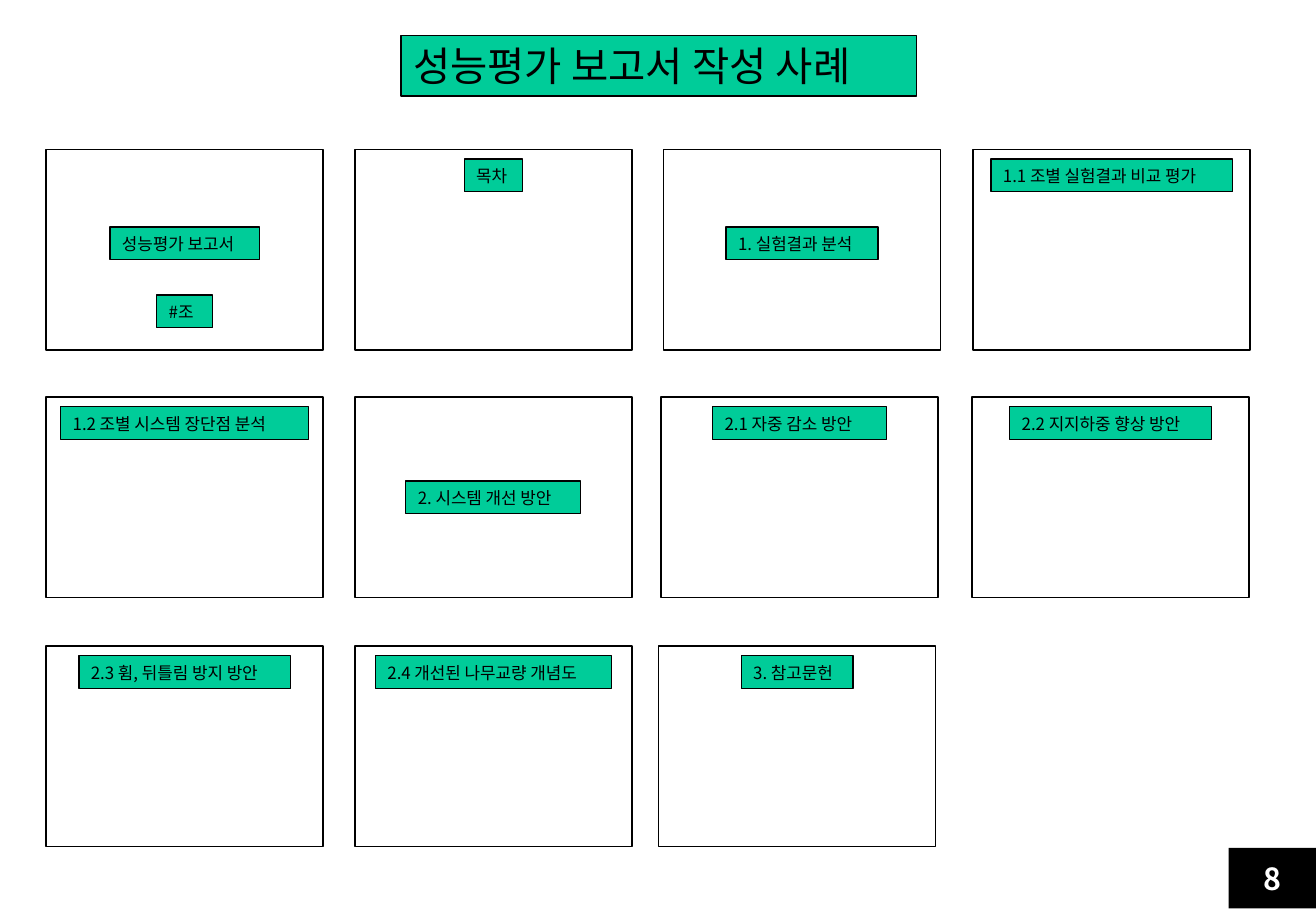
from pptx import Presentation, util as u
from pptx.dml.color import RGBColor
from pptx.enum import shapes, text

PX = 9144  # 100 px to the inch

THEME = {
    "font": "Noto Sans CJK KR",
    "ink": RGBColor(0, 0, 0),
    "paper": RGBColor(255, 255, 255),
    "accent": RGBColor(0x00, 0xCC, 0x99),
    "title": 24, "label": 10, "number": 18,
    "frame_line": 1, "label_line": 0.75,
}

CARD_W, CARD_H, LABEL_H = 228, 165, 27
TOP, MIDDLE, LOW_MIDDLE, BOTTOM = 8, 64, 69, 120  # label offsets in a card

# Each row: top, then cards as (left, [(label, label width, label offset)])
ROWS = [
    (123, [
        (38, [("성능평가 보고서", 123, MIDDLE), ("#조", 46, BOTTOM)]),
        (292, [("목차", 48, TOP)]),
        (546, [("1. 실험결과 분석", 125, MIDDLE)]),
        (801, [("1.1 조별 실험결과 비교 평가", 199, TOP)]),
    ]),
    (327, [
        (38, [("1.2 조별 시스템 장단점 분석", 204, TOP)]),
        (292, [("2. 시스템 개선 방안", 144, LOW_MIDDLE)]),
        (544, [("2.1 자중 감소 방안", 143, TOP)]),
        (800, [("2.2 지지하중 향상 방안", 166, TOP)]),
    ]),
    (532, [
        (38, [("2.3 휨, 뒤틀림 방지 방안", 174, TOP)]),
        (292, [("2.4 개선된 나무교량 개념도", 194, TOP)]),
        (542, [("3. 참고문헌", 92, TOP)]),
    ]),
]


def px(box):
    return [round(v * PX) for v in box]


def paint(sp, fill, line=None):
    sp.fill.solid()
    sp.fill.fore_color.rgb = fill
    if line:
        sp.line.color.rgb = THEME["ink"]
        sp.line.width = u.Pt(line)
    else:
        sp.line.fill.background()


def add_box(slide, box, fill, line=None):
    sp = slide.shapes.add_shape(shapes.MSO_SHAPE.RECTANGLE, *px(box))
    sp.shadow.inherit = False
    paint(sp, fill, line)
    return sp


def write(sp, words, size, color, align=text.PP_ALIGN.LEFT, bold=False):
    tf = sp.text_frame
    frame = {"word_wrap": True, "auto_size": text.MSO_AUTO_SIZE.NONE,
             "vertical_anchor": text.MSO_ANCHOR.MIDDLE,
             "margin_left": 10 * PX, "margin_right": 5 * PX,
             "margin_top": 0, "margin_bottom": 0}
    if align == text.PP_ALIGN.CENTER:
        frame["margin_right"] = frame["margin_left"]
    for name, value in frame.items():
        setattr(tf, name, value)
    p = tf.paragraphs[0]
    p.alignment, p.line_spacing = align, 1.0
    r = p.add_run()
    r.text = words
    for name, value in {"name": THEME["font"], "size": u.Pt(size), "bold": bold}.items():
        setattr(r.font, name, value)
    r.font.color.rgb = color


def add_title(slide, box):
    sp = slide.shapes.title
    sp.left, sp.top, sp.width, sp.height = px(box)
    paint(sp, THEME["accent"], THEME["label_line"])
    write(sp, "성능평가 보고서 작성 사례", THEME["title"], THEME["ink"])


def add_card(slide, box, labels):
    x, y, w, h = box
    add_box(slide, box, THEME["paper"], THEME["frame_line"])
    # Labels are centred across the card
    for words, width, offset in labels:
        sp = add_box(slide, (x + (w - width) / 2, y + offset, width, LABEL_H),
                     THEME["accent"], THEME["label_line"])
        write(sp, words, THEME["label"], THEME["ink"])


def add_page_number(slide, box):
    sp = add_box(slide, box, THEME["ink"])
    write(sp, "8", THEME["number"], THEME["paper"], text.PP_ALIGN.CENTER, True)


def main():
    prs = Presentation()
    prs.slide_width, prs.slide_height = px((1083, 750))
    slide = prs.slides.add_slide(prs.slide_layouts[5])

    add_page_number(slide, (1011, 698, 72, 50))
    for top, cards in ROWS:
        for left, labels in cards:
            add_card(slide, (left, top, CARD_W, CARD_H), labels)
    add_title(slide, (330, 29, 424, 50))

    prs.save("out.pptx")


if __name__ == "__main__":
    main()
